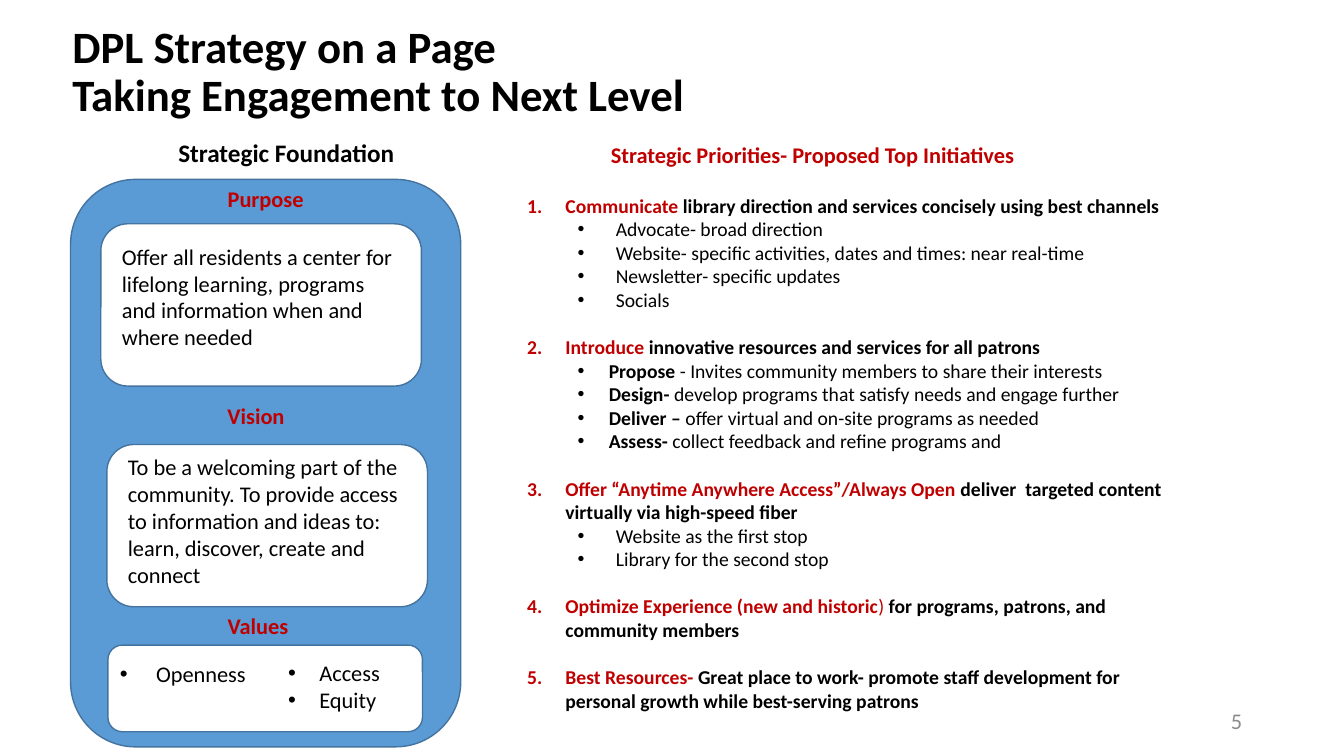
from lxml.etree import SubElement
from pptx import Presentation
from pptx.dml.color import RGBColor
from pptx.enum.shapes import MSO_SHAPE
from pptx.enum.text import MSO_ANCHOR, MSO_AUTO_SIZE, PP_ALIGN
from pptx.oxml.ns import qn
from pptx.util import Inches, Pt

RED, BLACK, GREY = "C00000", "000000", "8C8C8C"
BLUE, NAVY, WHITE = "5B9BD5", "43739E", "FFFFFF"


def tint(code):
    return RGBColor.from_string(code)


class Page:
    font = "Calibri"

    def __init__(self, deck):
        self.slide = deck.slides.add_slide(deck.slide_layouts[6])

    def card(self, left, top, width, height, fill=WHITE):
        card = self.slide.shapes.add_shape(
            MSO_SHAPE.ROUNDED_RECTANGLE,
            Inches(left), Inches(top), Inches(width), Inches(height))
        card.shadow.inherit = False
        card.fill.solid()
        card.fill.fore_color.rgb = tint(fill)
        card.line.color.rgb = tint(NAVY)
        card.line.width = Pt(1)

    def frame(self, left, top, width, height, wrap=True, grow=True):
        box = self.slide.shapes.add_textbox(
            Inches(left), Inches(top), Inches(width), Inches(height))
        frame = box.text_frame
        frame.word_wrap = wrap
        if grow:
            frame.auto_size = MSO_AUTO_SIZE.SHAPE_TO_FIT_TEXT
        else:
            frame.auto_size = MSO_AUTO_SIZE.NONE
            frame.vertical_anchor = MSO_ANCHOR.MIDDLE
        return frame

    def para(self, frame):
        """Return the unused first paragraph, or a new one."""
        first = frame.paragraphs[0]
        return frame.add_paragraph() if first.runs else first

    def run(self, para, text, size=16, color=BLACK, bold=False):
        run = para.add_run()
        run.text = text
        run.font.name = self.font
        run.font.size = Pt(size)
        run.font.bold = bold
        run.font.color.rgb = tint(color)

    def mark(self, para, indent, hang, color=BLACK, number=False):
        """Give the paragraph a hanging bullet or number."""
        props = para._p.get_or_add_pPr()
        props.set("marL", str(Inches(indent)))
        props.set("indent", str(-Inches(hang)))
        SubElement(SubElement(props, qn("a:buClr")), qn("a:srgbClr"), val=color)
        if number:
            SubElement(props, qn("a:buFont"), typeface=self.font)
            SubElement(props, qn("a:buAutoNum"), type="arabicPeriod")
        else:
            SubElement(props, qn("a:buFont"), typeface="Arial")
            SubElement(props, qn("a:buChar"), char="•")

    def label(self, spot, text, align=PP_ALIGN.LEFT, wrap=True, **style):
        para = self.para(self.frame(*spot, wrap=wrap))
        para.alignment = align
        self.run(para, text, **style)

    def title(self, spot, lines):
        para = self.para(self.frame(*spot, grow=False))
        para.line_spacing = 0.9
        for i, line in enumerate(lines):
            if i:
                para.add_line_break()
            self.run(para, line, size=32, bold=True)

    def number(self, spot, text):
        para = self.para(self.frame(*spot, grow=False))
        para.alignment = PP_ALIGN.RIGHT
        self.run(para, text, color=GREY)

    def bullets(self, spot, items, indent):
        frame = self.frame(*spot)
        for item in items:
            para = self.para(frame)
            self.mark(para, indent, indent)
            self.run(para, item)

    def plan(self, spot, goals):
        """Write numbered goals, each with its bulleted steps."""
        frame = self.frame(*spot)
        for i, (head, indent, hang, steps) in enumerate(goals):
            para = self.para(frame)
            self.mark(para, 0.38, 0.38, RED, number=True)
            if i:
                para.space_before = Pt(17)
            for text, color, bold in head:
                self.run(para, text, 14, color, bold)
            for lead, rest in steps:
                para = self.para(frame)
                para.level = 1
                self.mark(para, indent, hang)
                if lead:
                    self.run(para, lead, 14, bold=True)
                self.run(para, rest, 14)


LABELS = [
    ((0.98, 1.79, 3.31, 0.37), "Purpose"),
    ((0.51, 3.94, 4.06, 0.37), "Vision"),
    ((1.46, 6.02, 2.2, 0.37), "Values"),
]
CARDS = [(1, 2.22, 3.18, 1.61), (1.06, 4.41, 3.18, 1.61), (1.07, 6.4, 3.12, 0.86)]
BODIES = [
    ((1.11, 2.36, 2.91, 1.18),
     "Offer all residents a center for lifelong learning, programs and "
     "information when and where needed"),
    ((1.17, 4.45, 2.96, 1.45),
     "To be a welcoming part of the community. To provide access to "
     "information and ideas to: learn, discover, create and connect"),
]
GOALS = [
    ([("Communicate ", RED, True),
      ("library direction and services concisely using best channels", BLACK, True)],
     0.88, 0.38,
     [("", "Advocate- broad direction"),
      ("", "Website- specific activities, dates and times: near real-time"),
      ("", "Newsletter- specific updates"),
      ("", "Socials")]),
    ([("Introduce ", RED, True),
      ("innovative resources and services for all patrons", BLACK, True)],
     0.81, 0.31,
     [("Propose ", "- Invites community members to share their interests"),
      ("Design- ", "develop programs that satisfy needs and engage further"),
      ("Deliver – ", "offer virtual and on-site programs as needed"),
      ("Assess-", " collect feedback and refine programs and")]),
    ([("Offer “Anytime Anywhere Access”/Always Open ", RED, True),
      ("deliver  targeted content virtually via high-speed fiber", BLACK, True)],
     0.88, 0.38,
     [("", "Website as the first stop"),
      ("", "Library for the second stop")]),
    ([("Optimize Experience (new and historic", RED, True),
      (") ", RED, False),
      ("for programs, patrons, and community members", BLACK, True)],
     0, 0, []),
    ([("Best Resources- ", RED, True),
      ("Great place to work- promote staff development for personal growth "
       "while best-serving patrons", BLACK, True)],
     0, 0, []),
]


def main():
    deck = Presentation()
    deck.slide_width, deck.slide_height = Inches(13.33), Inches(7.5)
    page = Page(deck)
    page.title((0.62, 0, 11.5, 1.45),
               ["DPL Strategy on a Page", "Taking Engagement to Next Level"])
    page.label((1.67, 1.31, 2.47, 0.4), "Strategic Foundation",
               wrap=False, size=18, bold=True)
    page.label((5.96, 1.35, 4.26, 0.37),
               "Strategic Priorities- Proposed Top Initiatives",
               wrap=False, color=RED, bold=True)
    page.card(0.7, 1.78, 3.87, 5.63, BLUE)
    for spot in CARDS:
        page.card(*spot)
    for spot, text in LABELS:
        page.label(spot, text, PP_ALIGN.CENTER, color=RED, bold=True)
    for spot, text in BODIES:
        page.label(spot, text)
    page.bullets((1.09, 6.5, 6.67, 0.37), ["Openness"], 0.36)
    page.bullets((2.76, 6.49, 1.22, 0.64), ["Access", "Equity"], 0.31)
    page.plan((5.13, 1.87, 6.74, 5.28), GOALS)
    page.number((9.42, 6.95, 3, 0.4), "5")
    deck.save("out.pptx")


if __name__ == "__main__":
    main()
